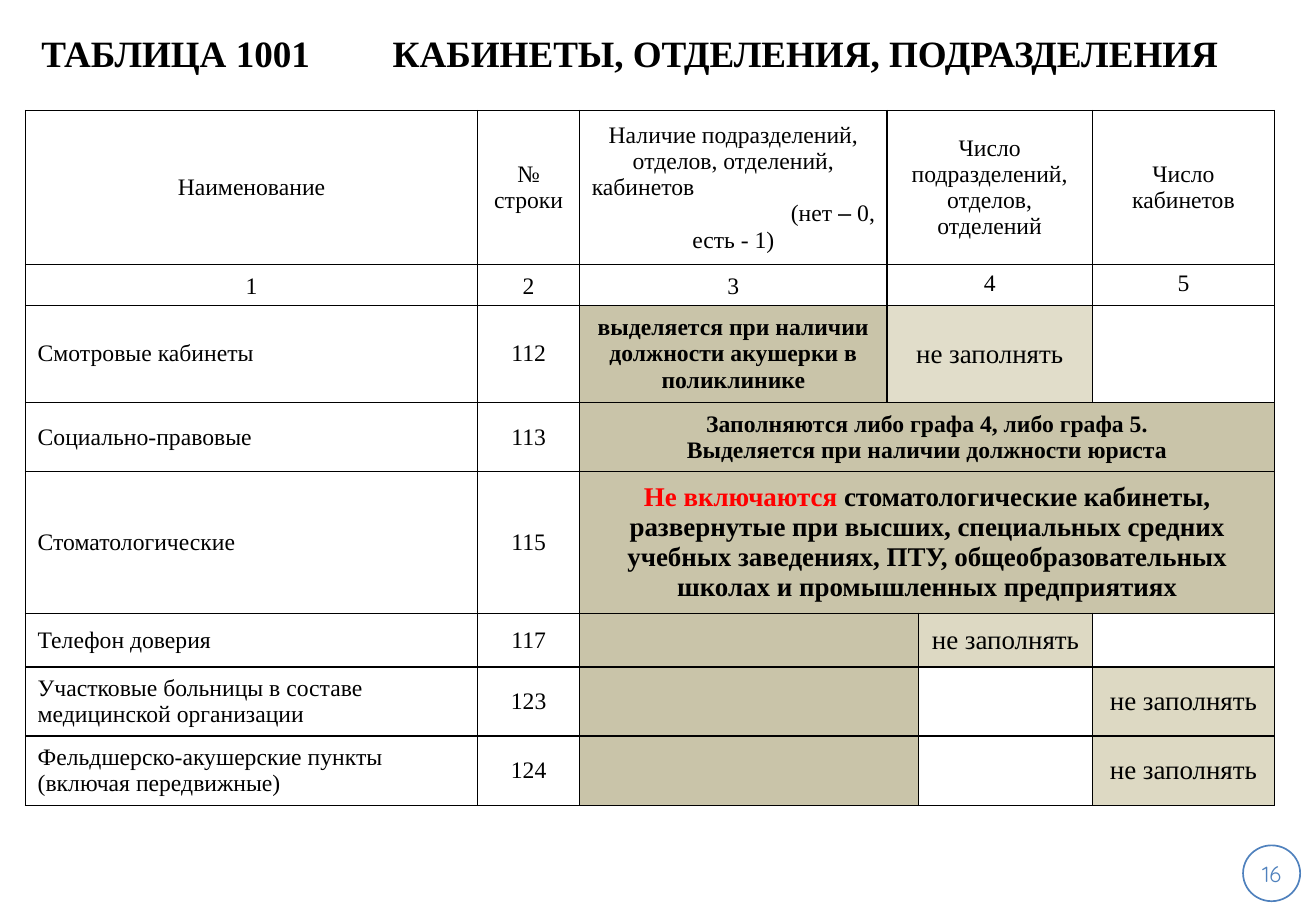
from dataclasses import dataclass

from lxml.etree import SubElement as Sub
from pptx import Presentation
from pptx.dml.color import RGBColor as Rgb
from pptx.enum.shapes import MSO_SHAPE as Geo
from pptx.enum.text import MSO_ANCHOR as Anchor, PP_ALIGN as Align
from pptx.oxml.ns import qn
from pptx.util import Emu, Inches, Pt

INK = {"black": "000000", "red": "FF0000", "blue": "4F81BD",
       "olive": "948A54", "sand": "C4BD97", "cream": "DDD9C3"}
CLEAR = {"olive": 50, "sand": 50}  # opacity in percent
SERIF = "Times New Roman"
WIDE, HIGH = Inches(10.83), Inches(7.5)
MID, LEFT, RIGHT = Align.CENTER, Align.LEFT, Align.RIGHT

# Columns and rows as percent of the slide
COLS = [34.35, 7.76, 23.36, 2.4, 13.2, 13.85]
ROWS = [16.93, 4.4, 10.67, 7.6, 14.53, 5.87, 7.6, 7.6]


@dataclass
class Run:
    text: str
    size: float = 14
    bold: bool = False
    ink: str = "black"
    font: str = SERIF


@dataclass
class Line:
    runs: list[Run]
    align: Align = MID


@dataclass
class Box:
    row: int
    col: int
    lines: list[Line]
    span: int = 1
    fill: str = ""
    anchor: Anchor = Anchor.MIDDLE


def across(part: float) -> Emu:
    return Emu(round(WIDE * part / 100))


def down(part: float) -> Emu:
    return Emu(round(HIGH * part / 100))


def one(text: str, align: Align = MID, **look) -> list[Line]:
    return [Line([Run(text, **look)], align)]


def write(frame, lines: list[Line]) -> None:
    for i, line in enumerate(lines):
        para = frame.add_paragraph() if i else frame.paragraphs[0]
        para.alignment = line.align
        for item in line.runs:
            run = para.add_run()
            run.text = item.text
            run.font.size = Pt(item.size)
            run.font.bold = item.bold
            run.font.name = item.font
            run.font.color.rgb = Rgb.from_string(INK[item.ink])


def rule(cell) -> None:
    props = cell._tc.get_or_add_tcPr()
    for side in "LRTB":
        edge = Sub(props, qn(f"a:ln{side}"), w=str(Pt(1)))
        paint = Sub(edge, qn("a:solidFill"))
        Sub(paint, qn("a:srgbClr"), val=INK["black"])


def shade(cell, name: str) -> None:
    if not name:
        cell.fill.background()
        return
    cell.fill.solid()
    cell.fill.fore_color.rgb = Rgb.from_string(INK[name])
    if name in CLEAR:
        paint = cell._tc.get_or_add_tcPr().find(qn("a:solidFill"))
        Sub(paint[0], qn("a:alpha"), val=str(CLEAR[name] * 1000))


def draw(grid, box: Box) -> None:
    cell = grid.cell(box.row, box.col)
    if box.span > 1:
        cell.merge(grid.cell(box.row, box.col + box.span - 1))
    cell.vertical_anchor = box.anchor
    shade(cell, box.fill)
    write(cell.text_frame, box.lines)


def skip(row: int, col: int, fill: str, span: int = 1) -> Box:
    return Box(row, col, one("не заполнять", size=16), span, fill)


# Table content
HEAD = [
    Box(0, 0, one("Наименование")),
    Box(0, 1, one("№ строки")),
    Box(0, 2, one("Наличие подразделений, отделов, отделений,")
        + one("кабинетов", LEFT)
        + [Line([Run("(нет "), Run("–", font="Arial"), Run(" 0,")], RIGHT)]
        + one("есть - 1)")),
    Box(0, 3, one("Число подразделений, отделов, отделений"), 2),
    Box(0, 5, one("Число кабинетов")),
]
MARKS = [Box(1, col, one(str(i)), 2 if col == 3 else 1,
             anchor=Anchor.BOTTOM if i < 4 else Anchor.TOP)
         for i, col in enumerate([0, 1, 2, 3, 5], 1)]
UNITS = [
    ("Смотровые кабинеты", "112"),
    ("Социально-правовые", "113"),
    ("Стоматологические", "115"),
    ("Телефон доверия", "117"),
    ("Участковые больницы в составе медицинской организации", "123"),
    ("Фельдшерско-акушерские пункты (включая передвижные)", "124"),
]
NAMES = [Box(row, 0, one(name, LEFT)) for row, (name, _) in enumerate(UNITS, 2)]
CODES = [Box(row, 1, one(code)) for row, (_, code) in enumerate(UNITS, 2)]
NOTES = [
    Box(2, 2, one("выделяется при наличии должности акушерки в поликлинике",
                  bold=True), fill="olive"),
    Box(3, 2, one("Заполняются либо графа 4, либо графа 5.", bold=True)
        + one("Выделяется при наличии должности юриста", bold=True), 4, "olive"),
    Box(4, 2, [Line([
        Run("Не включаются ", 16, True, "red"),
        Run("стоматологические кабинеты, развернутые при высших, специальных "
            "средних учебных заведениях, ПТУ, общеобразовательных школах и "
            "промышленных предприятиях", 16, True)])], 4, "olive"),
    *[Box(row, 2, [], 2, "olive") for row in (5, 6, 7)],
    skip(2, 3, "sand", 2),
    skip(5, 4, "cream"), skip(6, 5, "cream"), skip(7, 5, "cream"),
]


def main() -> None:
    deck = Presentation()
    deck.slide_width, deck.slide_height = WIDE, HIGH
    shapes = deck.slides.add_slide(deck.slide_layouts[6]).shapes

    # Page number
    disc = shapes.add_shape(Geo.OVAL, across(94.46), down(92.8),
                            across(4.34), down(6.13))
    disc.shadow.inherit = False
    disc.fill.background()
    disc.line.color.rgb = Rgb.from_string(INK["blue"])
    disc.line.width = Pt(1)
    frame = disc.text_frame
    frame.margin_left = frame.margin_right = 0
    frame.margin_top = frame.margin_bottom = 0
    frame.vertical_anchor = Anchor.MIDDLE
    write(frame, one("16", size=13, ink="blue", font="Quicksand"))

    # Title, its two parts set apart by a tab stop
    frame = shapes.add_textbox(across(3.14), 0, across(94.92),
                               down(11.47)).text_frame
    frame.word_wrap = True
    frame.margin_left = 0
    frame.vertical_anchor = Anchor.MIDDLE
    tabs = Sub(frame.paragraphs[0]._p.get_or_add_pPr(), qn("a:tabLst"))
    Sub(tabs, qn("a:tab"), pos=str(across(26.7)), algn="l")
    write(frame, one("ТАБЛИЦА 1001\tКАБИНЕТЫ, ОТДЕЛЕНИЯ, ПОДРАЗДЕЛЕНИЯ",
                     LEFT, size=22, bold=True))

    # Table
    grid = shapes.add_table(len(ROWS), len(COLS), across(1.94), down(12.13),
                            across(sum(COLS)), down(sum(ROWS))).table
    grid.first_row = grid.horz_banding = False
    for col, part in zip(grid.columns, COLS):
        col.width = across(part)
    for row, part in zip(grid.rows, ROWS):
        row.height = down(part)
    for cell in grid.iter_cells():
        rule(cell)
        shade(cell, "")
    for box in HEAD + MARKS + NAMES + CODES + NOTES:
        draw(grid, box)

    deck.save("out.pptx")


if __name__ == "__main__":
    main()
